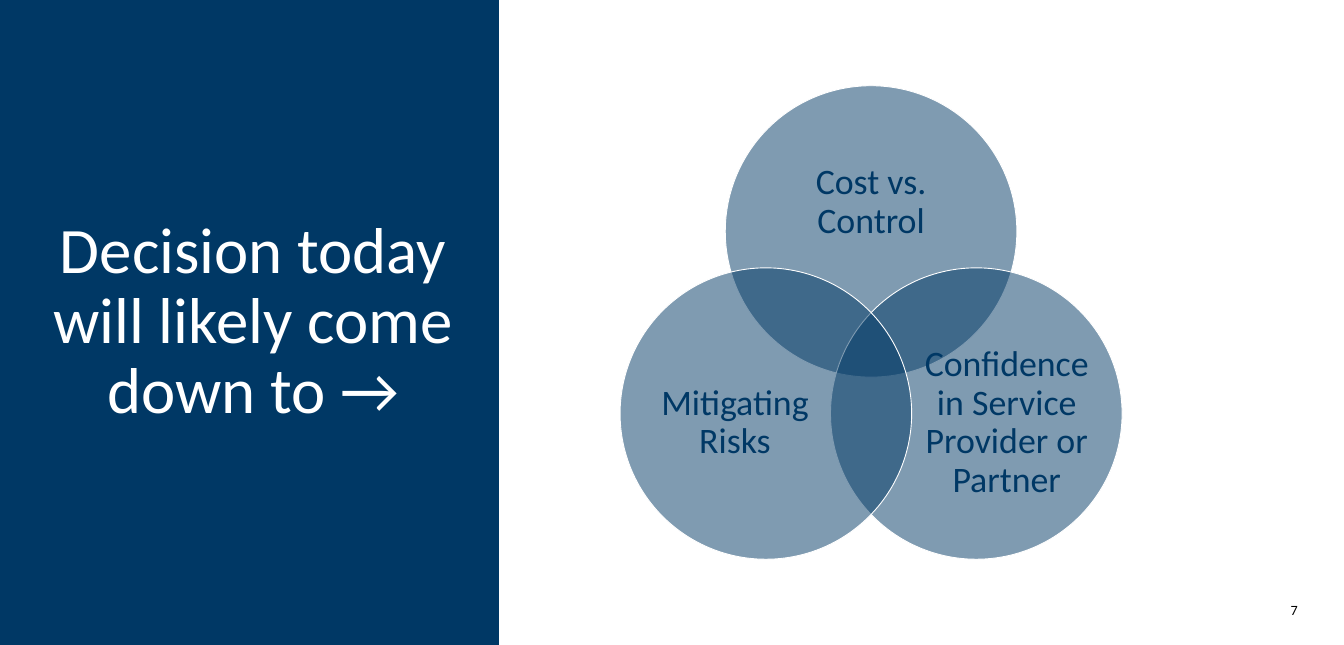
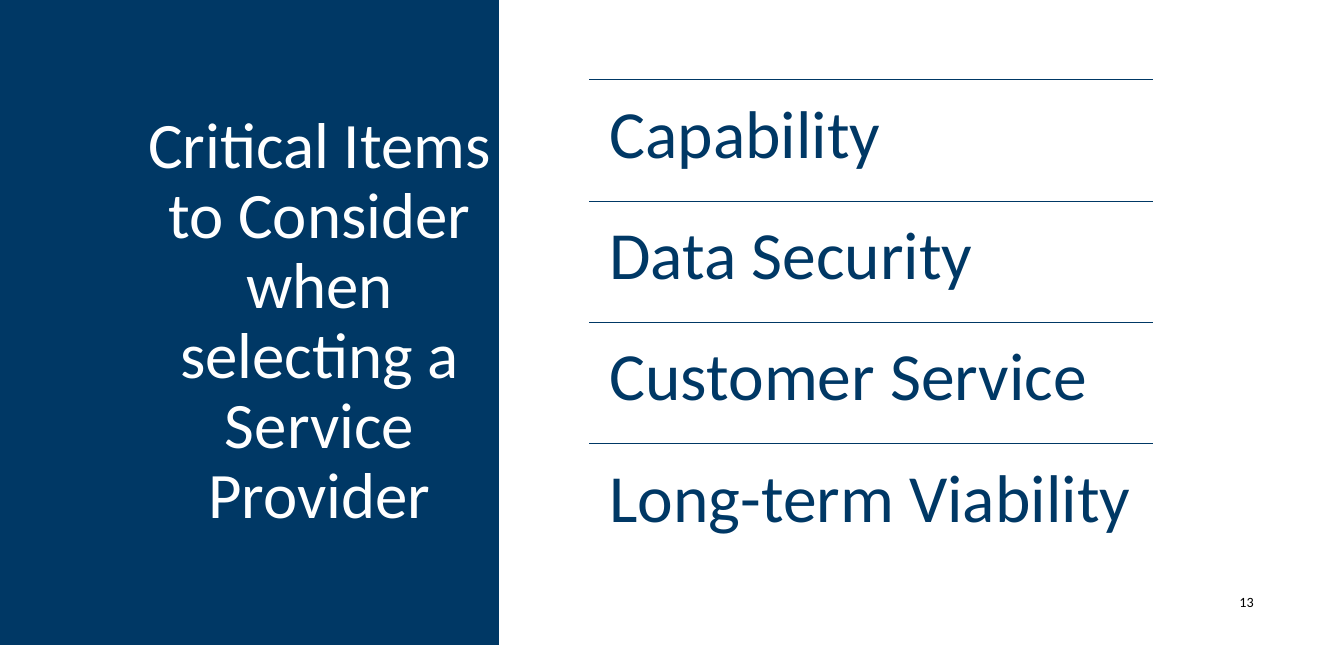
import math
import pptx
import pptx.dml.color
import pptx.enum.shapes
import pptx.enum.text
import pptx.oxml.ns
import pptx.util
import lxml.etree

Pt = pptx.util.Pt
ALIGN = pptx.enum.text.PP_ALIGN
ANCHOR = pptx.enum.text.MSO_ANCHOR
SHAPE = pptx.enum.shapes.MSO_SHAPE

# Shared style
NAVY, WHITE, BLACK = "003865", "FFFFFF", "000000"
FONT = "Calibri"
SLIDE_W, SLIDE_H = 1274.4, 612
BAND_W = 473
TITLE_SIZE, NUMBER_SIZE = 61.5, 13.4
LINE_WIDTH = 0.85
TITLE_INSETS = (0, 7.2, 0, 7.2)
NUMBER_INSETS = (7.2, 3.6, 7.2, 3.6)

# Content: boxes are left, top, width, height
DECISION = {
    "title": "Decision today will likely come down to →",
    "title_box": (46.8, 72.7, 386.6, 467.3),
    "number": "7",
    "number_box": (1085, 562.3, 152.6, 32.4),
}
CRITERIA = {
    "title": "Critical Items to Consider when selecting a Service Provider",
    "title_box": (140.4, 75.6, 325.4, 460.8),
    "number": "13",
    "number_box": (1067, 555.1, 128.9, 32.4),
}
# Factor, angle of its circle, label offset from the circle centre, label size
FACTORS = [
    ("Cost vs. Control", -90, (0, -27.7), (203, 124.6)),
    ("Confidence in Service Provider or Partner", 30, (28.9, 9), (165.6, 152)),
    ("Mitigating Risks", 150, (-29.3, 9), (165.6, 152)),
]
ITEMS = ["Capability", "Data Security", "Customer Service", "Long-term Viability"]

# Layout of the circles and of the list
VENN_X, VENN_Y, VENN_RADIUS, DIAMETER = 826, 334.8, 115.2, 276.5
LIST_X, LIST_Y, LIST_W, ROW_H = 558.7, 75.6, 534.2, 115.2


def color(hex_string):
    return pptx.dml.color.RGBColor.from_string(hex_string)


def add_text(slide, text, box, size, ink, align=ALIGN.CENTER, anchor=ANCHOR.MIDDLE,
             insets=(0, 0, 0, 0), spacing=0.9):
    frame = slide.shapes.add_textbox(*map(Pt, box)).text_frame
    frame.word_wrap = True
    frame.vertical_anchor = anchor
    (frame.margin_left, frame.margin_top,
     frame.margin_right, frame.margin_bottom) = map(Pt, insets)
    paragraph = frame.paragraphs[0]
    paragraph.alignment = align
    paragraph.line_spacing = spacing
    run = paragraph.add_run()
    run.text = text
    run.font.name = FONT
    run.font.size = Pt(size)
    run.font.color.rgb = color(ink)


def add_filled(slide, preset, box, fill):
    shape = slide.shapes.add_shape(preset, *map(Pt, box))
    shape.shadow.inherit = False
    shape.fill.solid()
    shape.fill.fore_color.rgb = color(fill)
    return shape


def add_circle(slide, x, y):
    circle = add_filled(slide, SHAPE.OVAL,
                        (x - DIAMETER / 2, y - DIAMETER / 2, DIAMETER, DIAMETER), NAVY)
    circle.line.color.rgb = color(WHITE)
    circle.line.width = Pt(LINE_WIDTH)
    # Half-transparent fill
    fill_color = circle.fill._xPr.find(".//" + pptx.oxml.ns.qn("a:srgbClr"))
    lxml.etree.SubElement(fill_color, pptx.oxml.ns.qn("a:alpha"), val="50000")


def add_rule(slide, y):
    rule = slide.shapes.add_connector(pptx.enum.shapes.MSO_CONNECTOR.STRAIGHT,
                                      Pt(LIST_X), Pt(y), Pt(LIST_X + LIST_W), Pt(y))
    rule.line.color.rgb = color(NAVY)
    rule.line.width = Pt(LINE_WIDTH)
    lxml.etree.SubElement(rule._element.spPr, pptx.oxml.ns.qn("a:effectLst"))


def add_slide(deck, content):
    """Slide with navy band, title and page number."""
    slide = deck.slides.add_slide(deck.slide_layouts[6])
    band = add_filled(slide, SHAPE.RECTANGLE, (0, 0, BAND_W, SLIDE_H), NAVY)
    band.line.fill.background()
    add_text(slide, content["title"], content["title_box"], TITLE_SIZE, WHITE,
             insets=TITLE_INSETS)
    add_text(slide, content["number"], content["number_box"], NUMBER_SIZE, BLACK,
             align=ALIGN.RIGHT, insets=NUMBER_INSETS, spacing=1.0)
    return slide


def build_decision(deck):
    slide = add_slide(deck, DECISION)
    for factor, angle, (dx, dy), (width, height) in FACTORS:
        x = VENN_X + VENN_RADIUS * math.cos(math.radians(angle))
        y = VENN_Y + VENN_RADIUS * math.sin(math.radians(angle))
        add_circle(slide, x, y)
        label_box = (x + dx - width / 2, y + dy - height / 2, width, height)
        add_text(slide, factor, label_box, 34, NAVY)


def build_criteria(deck):
    slide = add_slide(deck, CRITERIA)
    for row, item in enumerate(ITEMS):
        y = LIST_Y + row * ROW_H
        add_rule(slide, y)
        add_text(slide, item, (LIST_X, y, LIST_W, ROW_H), 64, NAVY,
                 align=ALIGN.LEFT, anchor=ANCHOR.TOP, insets=(19.2,) * 4)


def main():
    deck = pptx.Presentation()
    deck.slide_width, deck.slide_height = Pt(SLIDE_W), Pt(SLIDE_H)
    build_decision(deck)
    build_criteria(deck)
    deck.save("out.pptx")


if __name__ == "__main__":
    main()
